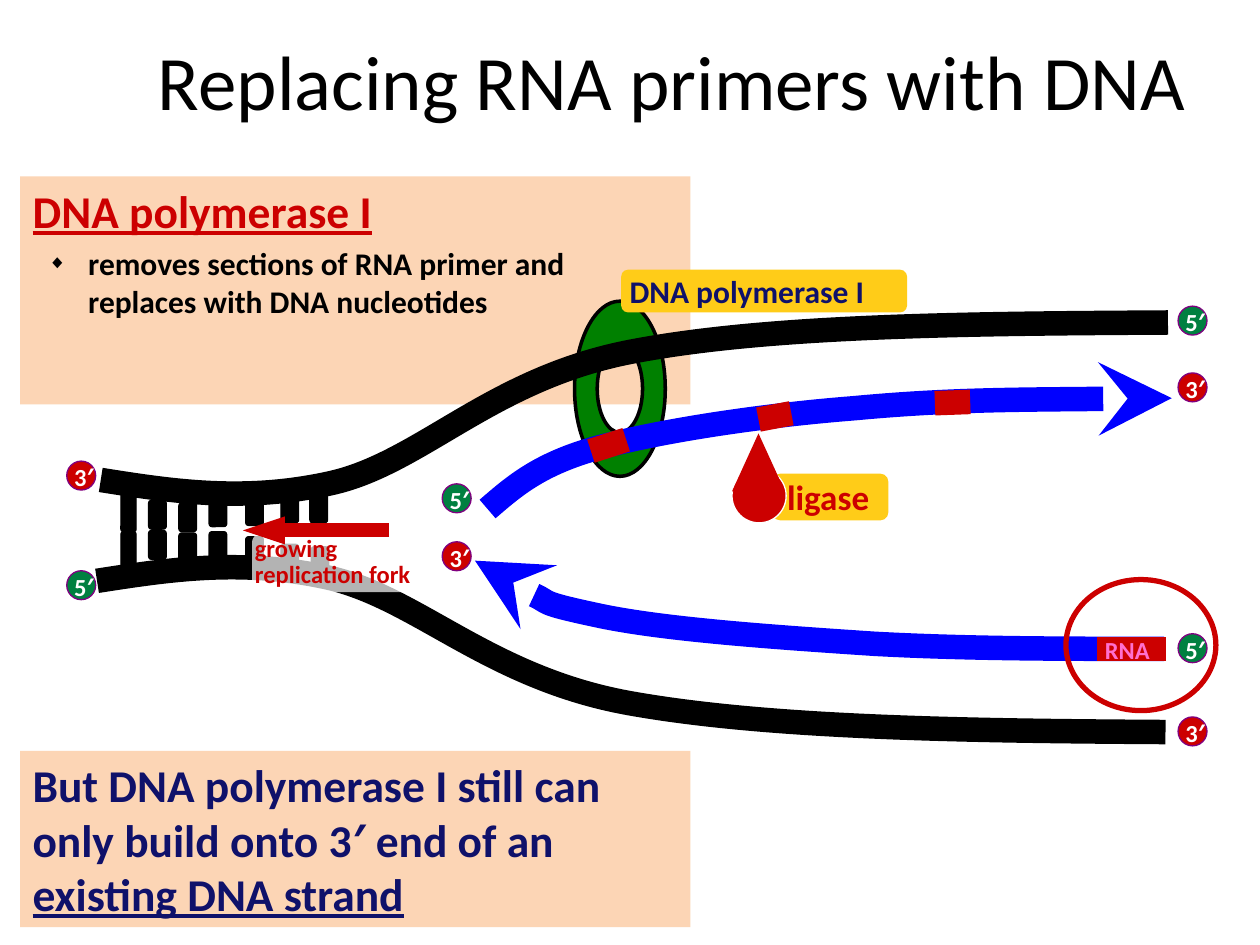
from lxml import etree
from pptx import Presentation
from pptx import util as u
from pptx.dml.color import RGBColor
from pptx.enum import shapes as sh, text as t
from pptx.oxml.ns import qn

COLORS = {
    "black": "000000", "white": "FFFFFF", "red": "CC0000", "blue": "0000FF",
    "navy": "0F116A", "peach": "FCD5B5", "yellow": "FFCC18", "pink": "FF6FCF",
    "ring": "008000", "five": "008040", "rim": "800080",
}
FONT = "Calibri"
COLS, ROWS = 10, 7.5
STRAND = 14  # points
KIND = sh.MSO_SHAPE

prs = Presentation()
prs.slide_width, prs.slide_height = u.Inches(COLS), u.Inches(ROWS)
CELL = prs.slide_width / COLS


def grid(*cells):
    return [round(c * CELL) for c in cells]


def rgb(name):
    return RGBColor.from_string(COLORS[name])


def sub(parent, tag, **attrs):
    return etree.SubElement(parent, qn(tag), attrs)


def paint(sp, fill=None, line=None, width=0.75, alpha=None):
    sp.shadow.inherit = False
    if fill:
        sp.fill.solid()
        sp.fill.fore_color.rgb = rgb(fill)
        if alpha:
            clr = sp._element.spPr.find(qn("a:solidFill"))[0]
            sub(clr, "a:alpha", val=str(alpha * 1000))
    else:
        sp.fill.background()
    if line:
        sp.line.color.rgb = rgb(line)
        sp.line.width = u.Pt(width)
    else:
        sp.line.fill.background()
    return sp


def add_shape(parent, kind, box, **style):
    return paint(parent.shapes.add_shape(kind, *grid(*box)), **style)


def add_run(p, text, size=14, color="black", bold=True, underline=False):
    r = p.add_run()
    r.text = text
    f = r.font
    f.name, f.size, f.bold, f.underline = FONT, u.Pt(size), bold, underline
    f.color.rgb = rgb(color)


def write(sp, *lines, anchor=t.MSO_ANCHOR.MIDDLE, align=t.PP_ALIGN.LEFT, wrap=False,
          inset=(0.1, 0.05, 0.1, 0.05), before=None, spacing=None, **font):
    """Fill a shape; a line is a string or a list of (text, font changes)."""
    tf = sp.text_frame
    tf.auto_size = t.MSO_AUTO_SIZE.NONE
    tf.word_wrap, tf.vertical_anchor = wrap, anchor
    tf.margin_left, tf.margin_top, tf.margin_right, tf.margin_bottom = grid(*inset)
    for i, line in enumerate(lines):
        p = tf.add_paragraph() if i else tf.paragraphs[0]
        p.alignment = align
        if before is not None:
            p.space_before = u.Pt(before)
        if spacing:
            p.line_spacing = spacing
        for text, change in [(line, {})] if isinstance(line, str) else line:
            add_run(p, text, **{**font, **change})
    return tf


def set_bullet(p, char=None, left=0.0, indent=0.0, size=60):
    pPr = p._p.get_or_add_pPr()
    pPr.set("marL", str(grid(left)[0]))
    pPr.set("indent", str(grid(indent)[0]))
    if not char:
        sub(pPr, "a:buNone")
        return
    sub(sub(pPr, "a:buClr"), "a:srgbClr", val=COLORS["black"])
    sub(pPr, "a:buSzPct", val=str(size * 1000))
    sub(pPr, "a:buChar", char=char)


def curve(s, *contours, close=False, **style):
    """Draw contours, each a start point and three points for every cubic."""
    fb = s.shapes.build_freeform(*grid(*contours[0][0]))
    for i, (start, *rest) in enumerate(contours):
        if i:
            fb.move_to(*grid(*start))
        fb.add_line_segments([grid(*p) for p in rest], close=close)
    sp = paint(fb.convert_to_shape(), **style)
    lines = list(sp._element.iter(qn("a:lnTo")))
    for first, second, third in zip(lines[::3], lines[1::3], lines[2::3]):
        first.tag = qn("a:cubicBezTo")
        for other in (second, third):
            first.append(other[0])
            other.getparent().remove(other)
    return sp


def add_arrow(sp, end, kind, **size):
    sub(sp.line._get_or_add_ln(), "a:" + end, type=kind, **size)


def strand(s, points, color, arrow=None):
    sp = curve(s, points, line=color, width=STRAND)
    if arrow:
        add_arrow(sp, arrow, "stealth")


def segment(s, start, end, width=STRAND, arrow=None):
    cx = s.shapes.add_connector(sh.MSO_CONNECTOR.STRAIGHT, *grid(*start, *end))
    cx.line.color.rgb = rgb("red")
    cx.line.width = u.Pt(width)
    if arrow:
        add_arrow(cx, "tailEnd", arrow, w="sm")
    sub(cx._element.spPr, "a:effectLst")


def ring(s, box, hole=0.5):
    x, y, w, h = box
    mx, my, k = x + w / 2, y + h / 2, 0.55

    def oval(rx, ry):
        unit = [(-1, 0), (-1, -k), (-k, -1), (0, -1), (k, -1), (1, -k), (1, 0),
                (1, k), (k, 1), (0, 1), (-k, 1), (-1, k), (-1, 0)]
        return [(mx + rx * a, my + ry * b) for a, b in unit]

    curve(s, oval(w / 2, h / 2), oval(w / 2 * hole, -h / 2 * hole), close=True,
          fill="ring", line="black", width=2)


def end_badge(s, x, y, digit):
    g = s.shapes.add_group_shape()
    add_shape(g, KIND.OVAL, (x, y, 0.23, 0.23), fill="five" if digit == 5 else "red", line="rim")
    label = g.shapes.add_textbox(*grid(x - 0.04, y - 0.04, 0.36, 0.33))
    write(label, f"{digit}′", color="white")


def title(s, box):
    sp = s.shapes.title
    sp.left, sp.top, sp.width, sp.height = grid(*box)
    write(sp, "Replacing RNA primers with DNA", align=t.PP_ALIGN.CENTER, wrap=True,
          size=44, bold=False)


def polymerase_list(s, box):
    sp = s.placeholders[1]
    sp.left, sp.top, sp.width, sp.height = grid(*box)
    sp.fill.solid()
    sp.fill.fore_color.rgb = rgb("peach")
    tf = write(sp, [("DNA polymerase I", dict(size=26, color="red", underline=True))],
               "removes sections of RNA primer and replaces with DNA nucleotides",
               anchor=t.MSO_ANCHOR.TOP, wrap=True, size=18, before=4)
    head, item = tf.paragraphs
    set_bullet(head)
    item.level = 1
    set_bullet(item, "◆", 0.44, -0.32)


def conclusion(s, box):
    sp = add_shape(s, KIND.RECTANGLE, box, fill="peach")
    write(sp, [("But DNA polymerase I still can only build onto 3′ end of an ", {}),
               ("existing DNA strand", dict(underline=True))],
          anchor=t.MSO_ANCHOR.TOP, wrap=True, size=26, color="navy", before=5)


def rungs(s):
    tops = [(0.96, 3.9, 0.12, 0.32), (1.18, 3.97), (1.42, 3.99), (1.66, 3.95),
            (1.95, 3.94), (2.23, 3.92), (2.46, 3.82, 0.14, 0.33)]
    bottoms = [(0.96, 4.22, 0.12, 0.32), (1.18, 4.21), (1.42, 4.23), (1.66, 4.22),
               (1.95, 4.26), (2.23, 4.32), (2.47, 4.34)]
    for x, y, *size in tops + bottoms:
        add_shape(s, KIND.ROUNDED_RECTANGLE, (x, y, *(size or (0.14, 0.23))),
                  fill="black", line="black")


def template_strands(s):
    strand(s, [(0.8, 3.81), (1.37, 3.9), (1.95, 3.99), (2.65, 3.83), (3.36, 3.66),
               (3.91, 3), (5.02, 2.79), (6.12, 2.58), (7.7, 2.57), (9.27, 2.56)], "black")
    strand(s, [(0.77, 4.61), (1.35, 4.52), (1.93, 4.43), (2.63, 4.59), (3.33, 4.76),
               (3.89, 5.38), (4.99, 5.58), (6.1, 5.78), (7.67, 5.8), (9.25, 5.81)], "black")


def fork_label(s, box):
    x, y, w, h = box
    sp = add_shape(s, KIND.ROUNDED_RECTANGLE, box, fill="white", alpha=70)
    write(sp, "growing", "replication fork", inset=(0, 0, 0, 0), spacing=0.9, color="red")
    segment(s, (x + 0.75 * w, y - 0.02), (x - 0.05 * w, y - 0.02), width=8, arrow="triangle")


def new_strands(s):
    strand(s, [(3.77, 4.45), (4.01, 4.61), (4.25, 4.78), (4.77, 4.89), (5.3, 5), (6.19, 5.06),
               (6.94, 5.11), (7.68, 5.15), (8.46, 5.15), (9.24, 5.15)], "blue", "headEnd")
    strand(s, [(3.87, 4.04), (4.08, 3.86), (4.28, 3.68), (4.76, 3.55), (5.25, 3.42),
               (6.02, 3.3), (6.78, 3.24), (7.53, 3.17), (8.42, 3.17), (9.3, 3.16)],
           "blue", "tailEnd")
    for start, end in [((7.42, 3.2), (7.7, 3.19)), ((6.02, 3.33), (6.28, 3.28)),
                       ((4.69, 3.58), (4.97, 3.49)), ((9.25, 5.15), (8.71, 5.15))]:
        segment(s, start, end)
    write(s.shapes.add_textbox(*grid(8.67, 4.99, 0.62, 0.33)), "RNA", color="pink")


def ligase(s, box):
    x, y, w, h = box
    g = s.shapes.add_group_shape()
    tag = add_shape(g, KIND.ROUNDED_RECTANGLE, (x + 0.32, y + 0.32, w - 0.32, h - 0.34),
                    fill="yellow")
    write(tag, "ligase", inset=(0.1, 0, 0, 0), size=20, color="red")
    add_shape(g, KIND.OVAL, (x, y + 0.28, 0.43, 0.43), fill="red", line="white")
    add_shape(g, KIND.ISOSCELES_TRIANGLE, (x, y, 0.42, 0.46), fill="red")


def build():
    s = prs.slides.add_slide(prs.slide_layouts[1])
    polymerase_list(s, (0.16, 1.4, 5.32, 1.81))
    ring(s, (4.56, 2.39, 0.72, 1.39))
    conclusion(s, (0.16, 5.96, 5.32, 1.4))
    title(s, (0.67, 0.22, 9.33, 0.83))
    template_strands(s)
    rungs(s)
    for x, y, digit in [(0.53, 4.53, 5), (9.35, 5.03, 5), (9.35, 2.43, 5), (3.51, 3.84, 5),
                        (3.51, 4.3, 3), (0.53, 3.66, 3), (9.35, 5.69, 3), (9.35, 2.96, 3)]:
        end_badge(s, x, y, digit)
    fork_label(s, (2, 4.23, 1.45, 0.47))
    tag = add_shape(s, KIND.ROUNDED_RECTANGLE, (4.93, 2.14, 2.27, 0.34), fill="yellow")
    write(tag, "DNA polymerase I", inset=(0.05, 0, 0.05, 0), wrap=True, size=18, color="navy")
    new_strands(s)
    ligase(s, (5.81, 3.44, 1.24, 0.71))
    add_shape(s, KIND.OVAL, (8.46, 4.6, 1.19, 1.04), line="red", width=3)
    prs.save("out.pptx")


if __name__ == "__main__":
    build()
